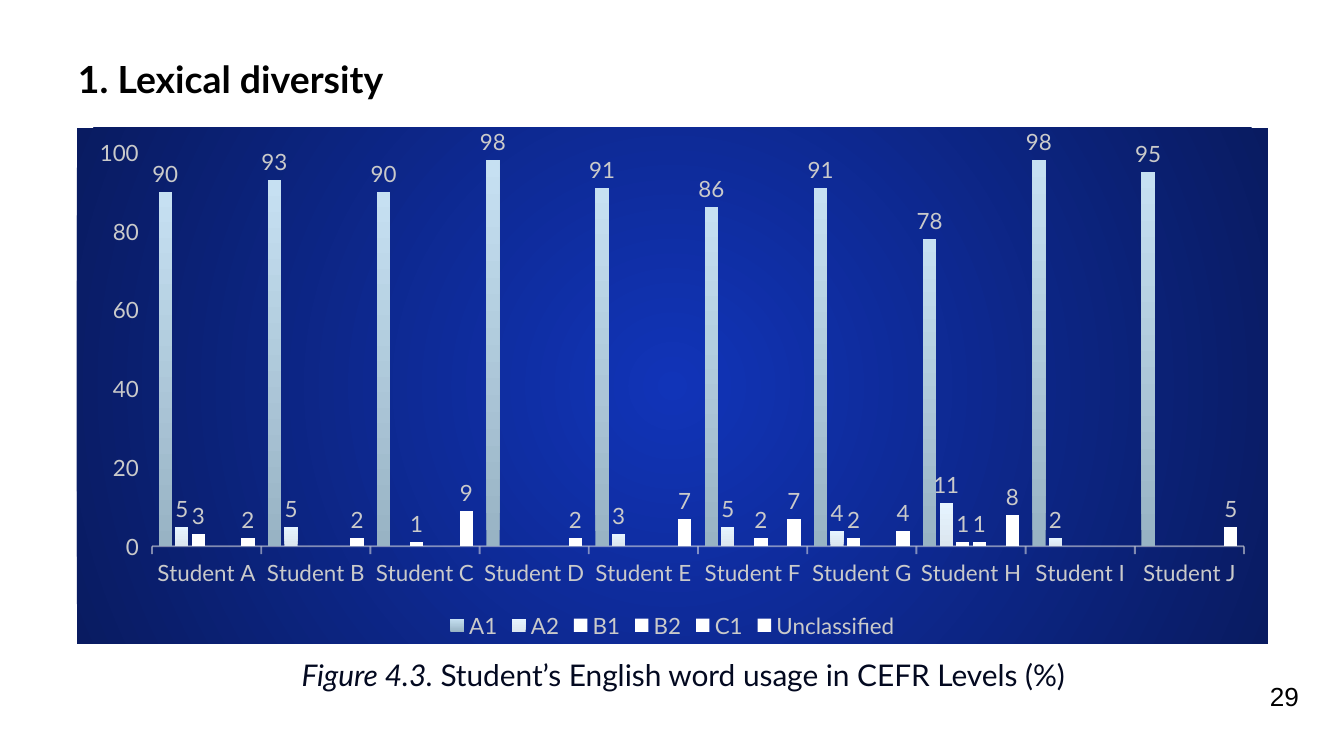
from lxml import etree
from pptx import Presentation
from pptx.chart.data import CategoryChartData
from pptx.dml.color import RGBColor
from pptx.enum.chart import XL_CHART_TYPE, XL_LABEL_POSITION, XL_LEGEND_POSITION, XL_TICK_MARK
from pptx.enum.text import PP_ALIGN
from pptx.oxml import parse_xml
from pptx.oxml.ns import nsdecls, qn
from pptx.util import Emu, Pt

PX = 914400 / 134.4
SLIDE_SIZE = (1344, 756)

BLACK = RGBColor(0x00, 0x00, 0x00)
WHITE = RGBColor(0xFF, 0xFF, 0xFF)
NAVY = RGBColor(0x03, 0x09, 0x20)
LABEL_GREY = RGBColor(0xCA, 0xCA, 0xCA)
AXIS_GREY = RGBColor(0xE2, 0xE2, 0xE2)
STEEL = RGBColor(0x98, 0xB3, 0xC4)
SKY = RGBColor(0xC6, 0xE0, 0xF2)
MIST = RGBColor(0xDB, 0xE6, 0xEF)
ICE = RGBColor(0xE6, 0xF4, 0xFF)
BLUE_CENTRE = RGBColor(0x11, 0x34, 0xB8)
BLUE_EDGE = RGBColor(0x09, 0x1B, 0x61)

# box, inset, indent, alignment, runs, format shared by the runs
TEXTS = [
    ((65, 43, 501, 85), 13, 0, PP_ALIGN.LEFT,
     [("1. Lexical diversity", {"bold": True})],
     {"name": "Lato", "size": Pt(20), "color": BLACK}),
    ((106, 644, 1132, 63), 13, 23, PP_ALIGN.CENTER,
     [("Figure 4.3. ", {"italic": True}),
      ("Student’s English word usage in CEFR Levels (%)", {})],
     {"name": "Lato", "size": Pt(16), "color": NAVY}),
    ((1247, 673, 75, 46), 7, 0, PP_ALIGN.CENTER,
     [("29", {})],
     {"name": "Arial", "size": Pt(14), "color": BLACK}),
]

CHART_BOX = (77, 128, 1191, 516)
PLOT_BOX = (152, 152, 1092, 394)
STUDENTS = [f"Student {letter}" for letter in "ABCDEFGHIJ"]
# level, values, colours from bottom to top
SERIES = [
    ("A1", (90, 93, 90, 98, 91, 86, 91, 78, 98, 95), (STEEL, SKY)),
    ("A2", (5, 5, None, None, 3, 5, 4, 11, 2, None), (MIST, ICE)),
    ("B1", (3, None, 1, None, None, None, 2, 1, None, None), (WHITE,)),
    ("B2", (None, None, None, None, None, 2, None, 1, None, None), (WHITE,)),
    ("C1", (None,) * 10, (WHITE,)),
    ("Unclassified", (2, 2, 9, 2, 7, 7, 4, 8, None, 5), (WHITE,)),
]
CHART_FONT = {"name": "Lato", "size": Pt(12), "color": LABEL_GREY}


def px(lengths):
    return [Emu(round(length * PX)) for length in lengths]


def set_font(font, values):
    for name, value in values.items():
        if name == "color":
            font.color.rgb = value
        else:
            setattr(font, name, value)


def add_text(slide, box, inset, indent, alignment, runs, font_format):
    frame = slide.shapes.add_textbox(*px(box)).text_frame
    frame.word_wrap = True
    for side in ("left", "top", "right", "bottom"):
        setattr(frame, f"margin_{side}", Emu(round(inset * PX)))
    paragraph = frame.paragraphs[0]
    paragraph.alignment = alignment
    if indent:
        properties = paragraph._p.get_or_add_pPr()
        properties.set("marL", str(round(indent * PX)))
        properties.set("indent", "0")
    for text, extra in runs:
        run = paragraph.add_run()
        run.text = text
        set_font(run.font, {**font_format, **extra})


def fill_series(series, colors):
    fill = series.format.fill
    if len(colors) == 1:
        fill.solid()
        fill.fore_color.rgb = colors[0]
        return
    fill.gradient()
    fill.gradient_angle = 90
    for stop, color in zip(fill.gradient_stops, colors):
        stop.color.rgb = color


def add_radial_background(chart):
    properties = parse_xml(
        f'<c:spPr {nsdecls("c", "a")}><a:gradFill><a:gsLst>'
        f'<a:gs pos="0"><a:srgbClr val="{BLUE_CENTRE}"/></a:gs>'
        f'<a:gs pos="100000"><a:srgbClr val="{BLUE_EDGE}"/></a:gs></a:gsLst>'
        '<a:path path="circle"><a:fillToRect l="50000" t="50000" r="50000" b="50000"/></a:path>'
        '</a:gradFill><a:ln><a:noFill/></a:ln></c:spPr>')
    chart._chartSpace.find(qn("c:chart")).addnext(properties)


def place_plot(chart):
    """Fix the area inside the axes as fractions of the chart."""
    left, top, width, height = CHART_BOX
    x, y, plot_width, plot_height = PLOT_BOX
    fractions = {"x": (x - left) / width, "y": (y - top) / height,
                 "w": plot_width / width, "h": plot_height / height}
    plot_area = chart._chartSpace.find(f'.//{qn("c:plotArea")}')
    for old in plot_area.findall(qn("c:layout")):
        plot_area.remove(old)
    layout = etree.Element(qn("c:layout"))
    manual = etree.SubElement(layout, qn("c:manualLayout"))
    settings = {"layoutTarget": "inner", "xMode": "edge", "yMode": "edge",
                **{name: f"{value:.3f}" for name, value in fractions.items()}}
    for name, value in settings.items():
        etree.SubElement(manual, qn(f"c:{name}")).set("val", value)
    plot_area.insert(0, layout)


def style_axes(chart):
    for axis in (chart.category_axis, chart.value_axis):
        axis.has_major_gridlines = False
        axis.major_tick_mark = XL_TICK_MARK.OUTSIDE
        axis.minor_tick_mark = XL_TICK_MARK.NONE
        set_font(axis.tick_labels.font, CHART_FONT)
    line = chart.category_axis.format.line
    line.width = Pt(1)
    line.color.rgb = AXIS_GREY
    color = chart.category_axis._element.find(f'.//{qn("a:ln")}//{qn("a:srgbClr")}')
    etree.SubElement(color, qn("a:alpha")).set("val", "54000")
    scale = {"minimum_scale": 0, "maximum_scale": 100, "major_unit": 20}
    for name, value in scale.items():
        setattr(chart.value_axis, name, value)
    chart.value_axis.format.line.fill.background()


def add_level_chart(slide):
    data = CategoryChartData()
    data.categories = STUDENTS
    for level, values, _ in SERIES:
        data.add_series(level, values)
    chart = slide.shapes.add_chart(
        XL_CHART_TYPE.COLUMN_CLUSTERED, *px(CHART_BOX), data).chart
    chart.has_title = False
    set_font(chart.font, {"name": "Lato", "size": Pt(10), "color": NAVY})
    add_radial_background(chart)
    place_plot(chart)
    style_axes(chart)

    plot = chart.plots[0]
    for name, value in {"gap_width": 100, "overlap": -24, "vary_by_categories": False}.items():
        setattr(plot, name, value)
    for series, (_, _, colors) in zip(plot.series, SERIES):
        fill_series(series, colors)
        labels = series.data_labels
        labels.show_value = True
        labels.position = XL_LABEL_POSITION.OUTSIDE_END
        set_font(labels.font, CHART_FONT)

    chart.has_legend = True
    chart.legend.position = XL_LEGEND_POSITION.BOTTOM
    chart.legend.include_in_layout = False
    set_font(chart.legend.font, CHART_FONT)


def main():
    presentation = Presentation()
    presentation.slide_width, presentation.slide_height = px(SLIDE_SIZE)
    slide = presentation.slides.add_slide(presentation.slide_layouts[6])
    add_level_chart(slide)
    for text in TEXTS:
        add_text(slide, *text)
    presentation.save("out.pptx")


if __name__ == "__main__":
    main()
